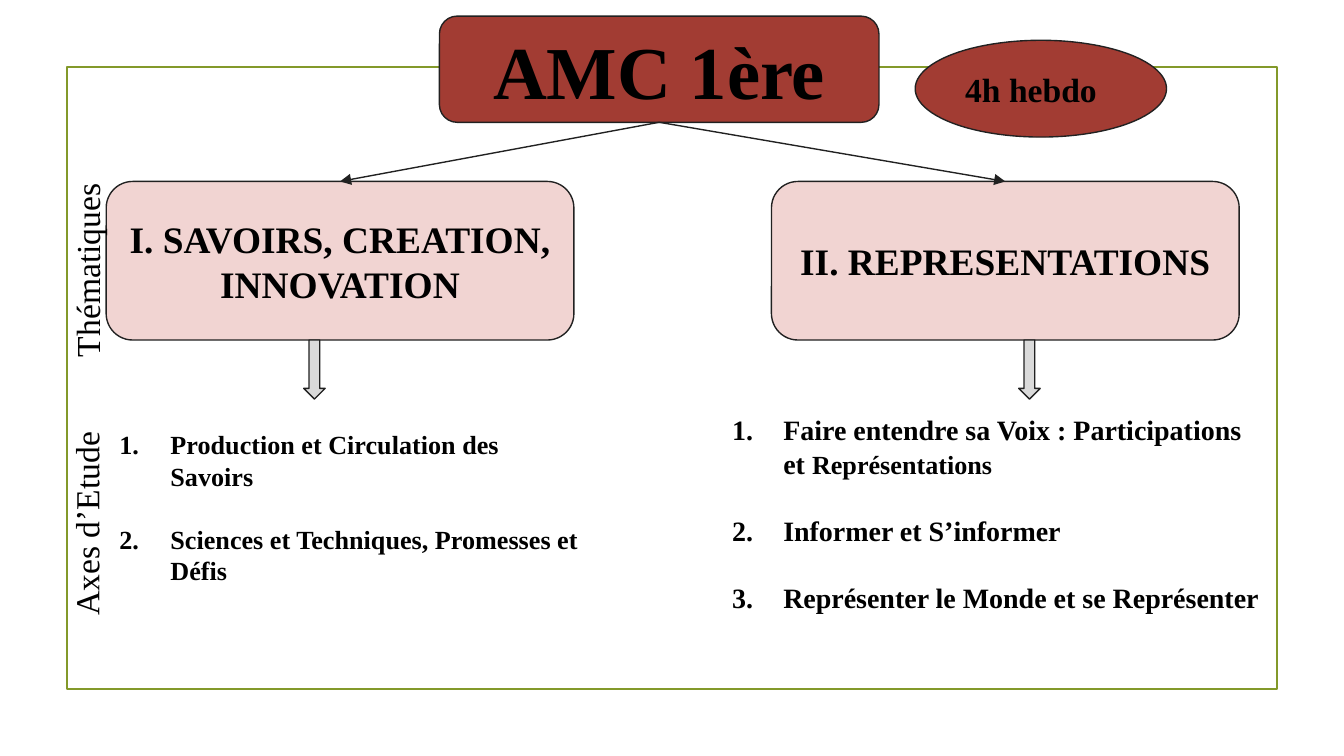
from lxml import etree
from pptx import Presentation
from pptx.dml.color import RGBColor
from pptx.enum.shapes import MSO_CONNECTOR, MSO_SHAPE
from pptx.enum.text import MSO_ANCHOR, MSO_AUTO_SIZE, PP_ALIGN
from pptx.oxml.ns import qn
from pptx.util import Inches, Pt

COLORS = {"frame": "83992A", "brick": "A23C33", "rose": "F1D4D2",
          "arrow": "DADADA", "outline": "212121", "text": "000000"}
FONT = "Times New Roman"
INDENT = Inches(0.38)


def color(name):
    return RGBColor.from_string(COLORS[name])


def style_font(font, size, bold):
    font.name, font.size, font.bold = FONT, Pt(size), bold
    font.color.rgb = color("text")


def set_margins(frame):
    frame.word_wrap = True
    frame.margin_left = frame.margin_right = Inches(0.1)
    frame.margin_top = frame.margin_bottom = Inches(0.1)


def add_block(page, kind, box, fill=None, line="outline", weight=0.75):
    block = page.shapes.add_shape(kind, *map(Inches, box))
    block.shadow.inherit = False
    if fill:
        block.fill.solid()
        block.fill.fore_color.rgb = color(fill)
    else:
        block.fill.background()
    block.line.color.rgb = color(line)
    block.line.width = Pt(weight)
    return block


def add_label(page, kind, box, fill, text, size, align=PP_ALIGN.CENTER):
    """Add a filled shape with bold text in it."""
    label = add_block(page, kind, box, fill)
    frame = label.text_frame
    set_margins(frame)
    frame.vertical_anchor = MSO_ANCHOR.MIDDLE
    frame.text = text
    para = frame.paragraphs[0]
    para.alignment = align
    style_font(para.runs[0].font, size, True)
    return label


def add_text_box(page, box):
    text_box = page.shapes.add_textbox(*map(Inches, box))
    set_margins(text_box.text_frame)
    text_box.text_frame.auto_size = MSO_AUTO_SIZE.SHAPE_TO_FIT_TEXT
    return text_box


def add_side_title(page, box, text):
    """Add a title that reads upwards along the frame."""
    title = add_text_box(page, box)
    title.rotation = 270
    title.text_frame.text = text
    style_font(title.text_frame.paragraphs[0].runs[0].font, 18, False)


def add_numbered_list(page, box, items, size, gap):
    frame = add_text_box(page, box).text_frame
    for index, item in enumerate(items):
        para = frame.paragraphs[0] if index == 0 else frame.add_paragraph()
        para.text = item
        properties = para._p.get_or_add_pPr()
        properties.set("marL", str(INDENT))
        properties.set("indent", str(-INDENT))
        if index:
            para.space_before = Pt(gap)
        number = etree.SubElement(properties, qn("a:buAutoNum"))
        number.set("type", "arabicPeriod")
        style_font(para.runs[0].font, size, True)
    return frame


def add_theme(page, box, text, arrow_offset):
    """Add a theme card with the block arrow that leaves its lower side."""
    left, top, width, height = box
    card = add_label(page, MSO_SHAPE.FLOWCHART_ALTERNATE_PROCESS, box,
                     "rose", text, 20)
    add_block(page, MSO_SHAPE.DOWN_ARROW,
              (left + arrow_offset, top + height, 0.16, 0.44), "arrow")
    return card


def link(page, parent, child):
    """Draw an arrow from the bottom of parent to the top of child."""
    connector = page.shapes.add_connector(MSO_CONNECTOR.STRAIGHT, 0, 0, 0, 0)
    connector.begin_connect(parent, 2)
    connector.end_connect(child, 0)
    connector.line.color.rgb = color("outline")
    connector.line.width = Pt(0.75)
    etree.SubElement(connector.line._get_or_add_ln(),
                     qn("a:tailEnd")).set("type", "triangle")
    etree.SubElement(connector._element.spPr, qn("a:effectLst"))


def main():
    deck = Presentation()
    deck.slide_width = Inches(10)
    deck.slide_height = deck.slide_width * 9 // 16
    page = deck.slides.add_slide(deck.slide_layouts[6])

    add_block(page, MSO_SHAPE.RECTANGLE, (0.5, 0.5, 9, 4.63),
              line="frame", weight=1.25)
    course = add_label(page, MSO_SHAPE.FLOWCHART_ALTERNATE_PROCESS,
                       (3.27, 0.12, 3.27, 0.79), "brick", "AMC 1ère", 40)
    themes = [
        (0.79, "I. SAVOIRS, CREATION, INNOVATION", 1.47),
        (5.74, "II. REPRESENTATIONS", 1.84),
    ]
    for left, text, arrow_offset in themes:
        card = add_theme(page, (left, 1.35, 3.48, 1.18), text, arrow_offset)
        link(page, course, card)

    add_numbered_list(page, (0.79, 3.09, 3.64, 1.14), [
        "Production et Circulation des Savoirs",
        "Sciences et Techniques, Promesses et Défis",
    ], 14, 17)
    axes = add_numbered_list(page, (5.35, 2.97, 4.16, 1.72), [
        "Faire entendre sa Voix : Participations et ",
        "Informer et S’informer",
        "Représenter le Monde et se Représenter",
    ], 15, 18)
    span = axes.paragraphs[0].add_run()
    span.text = "Représentations"
    style_font(span.font, 14, True)

    add_side_title(page, (-0.34, 1.58, 1.91, 0.44), "Thématiques")
    add_side_title(page, (-0.49, 3.36, 2.2, 0.44), "Axes d’Etude")
    add_label(page, MSO_SHAPE.OVAL, (6.81, 0.3, 1.87, 0.72), "brick",
              "4h hebdo", 18, PP_ALIGN.LEFT)
    deck.save("out.pptx")


if __name__ == "__main__":
    main()
